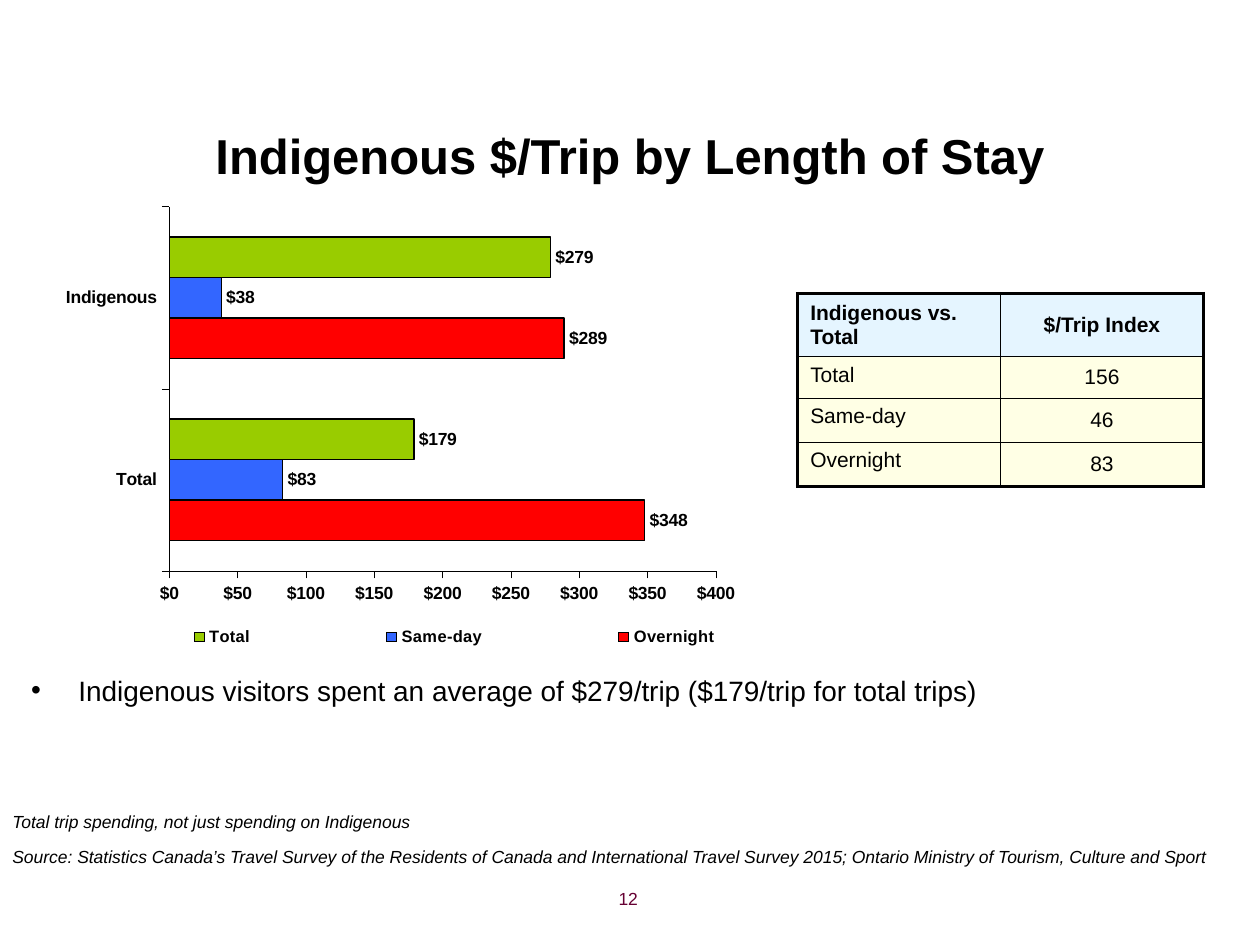
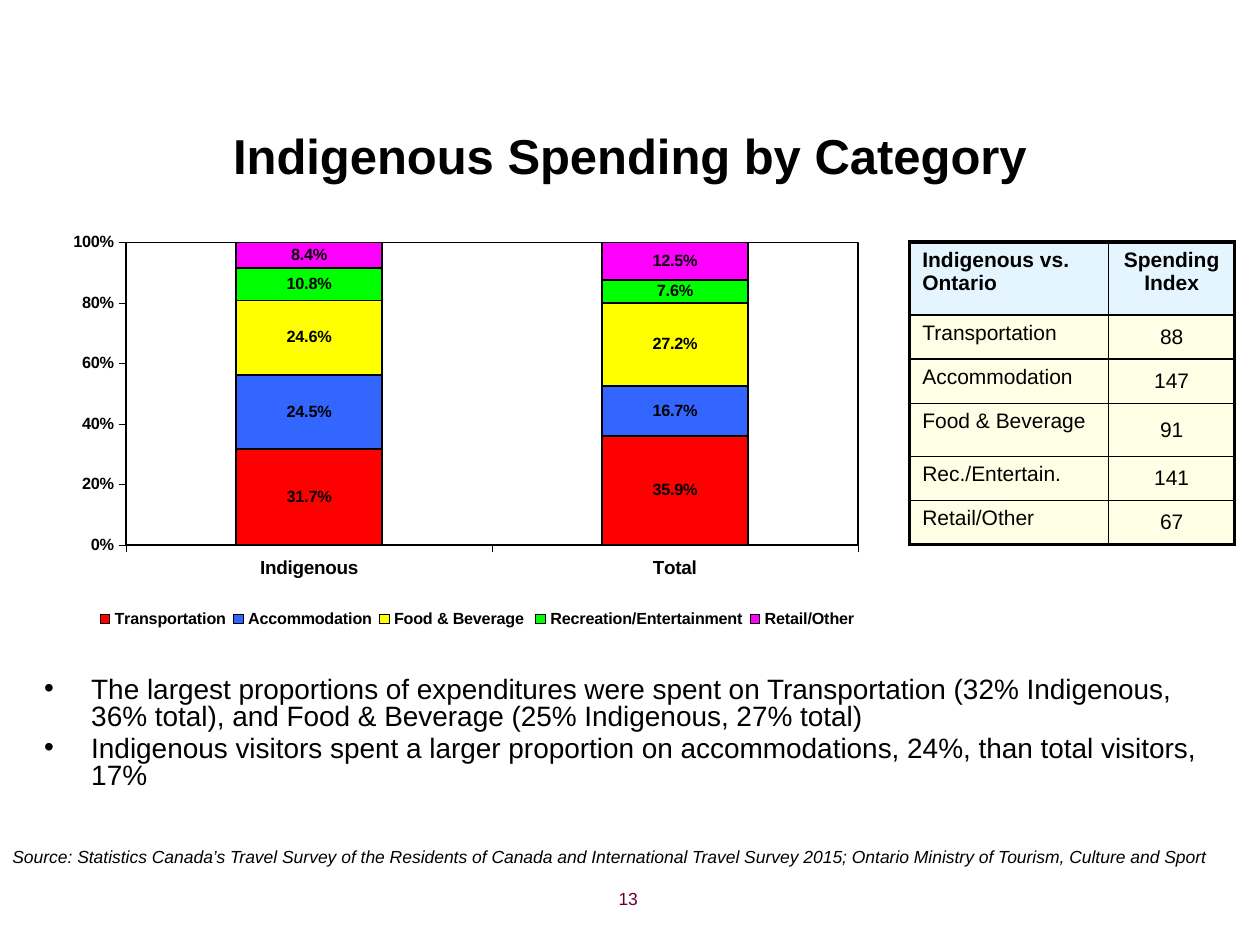
from lxml.etree import SubElement as Sub
from pptx import Presentation
from pptx.chart.data import CategoryChartData as Data
from pptx.dml.color import RGBColor
from pptx.enum.chart import XL_CHART_TYPE as Kind, XL_LABEL_POSITION as Spot
from pptx.enum.chart import XL_LEGEND_POSITION as Side, XL_TICK_MARK as Tick
from pptx.enum.text import MSO_ANCHOR as Anchor, PP_ALIGN as Align
from pptx.oxml import parse_xml
from pptx.oxml.ns import nsdecls, qn
from pptx.util import Cm, Pt

BLACK, RED, BLUE = "000000", "FF0000", "3366FF"
HEAD, ROW, PLUM = "CCECFF", "FFFFCC", "660033"
BASE = {"name": "Arial", "size": 12, "bold": False, "italic": False, "color": BLACK}
SOURCE = ("Source: Statistics Canada’s Travel Survey of the Residents of Canada and "
          "International Travel Survey 2015; Ontario Ministry of Tourism, Culture and Sport")
SOURCE_TOP, NOTE_TOP = 16.94, 16.23


def rgb(text):
    return RGBColor.from_string(text)


def box(*sizes):
    return [Cm(size) for size in sizes]


def style(font, **form):
    for key, value in {**BASE, **form}.items():
        if key == "color":
            font.color.rgb = rgb(value)
        else:
            setattr(font, key, Pt(value) if key == "size" else value)


def outline(line, width):
    line.color.rgb = rgb(BLACK)
    line.width = Pt(width)


def add_text(slide, area, lines, align=Align.LEFT, bullet=False, **form):
    frame = slide.shapes.add_textbox(*box(*area)).text_frame
    frame.word_wrap = True
    for n, text in enumerate(lines):
        para = frame.paragraphs[0] if n == 0 else frame.add_paragraph()
        para.text = text
        para.alignment = align
        if bullet:
            props = para._p.get_or_add_pPr()
            props.set("marL", str(Cm(0.95)))
            props.set("indent", str(-Cm(0.95)))
            Sub(props, qn("a:buFont")).set("typeface", "Arial")
            Sub(props, qn("a:buChar")).set("char", "•")
            para.line_spacing = 0.8
            if n:
                para.space_before = Pt(3.2)
        style(para.runs[0].font, **form)


def add_frame(deck, title, page):
    """Start a slide with its title, source line and page number."""
    slide = deck.slides.add_slide(deck.slide_layouts[5])
    head = slide.shapes.title
    head.left, head.top, head.width, head.height = box(1.27, 2.18, 22.86, 1.9)
    head.text_frame.text = title
    head.text_frame.vertical_anchor = Anchor.MIDDLE
    para = head.text_frame.paragraphs[0]
    para.alignment = Align.CENTER
    style(para.runs[0].font, size=28, bold=True)
    add_note(slide, SOURCE_TOP, SOURCE)
    add_text(slide, (7.19, 17.78, 5.92, 0.89), [page], Align.RIGHT, size=10, color=PLUM)
    return slide


def add_note(slide, top, text):
    add_text(slide, (0, top, 24.89, 0.69), [text], size=10, italic=True)


def paint(cell, color, edges):
    """Fill a cell at half strength and rule its left, right, top and bottom."""
    cell.fill.solid()
    cell.fill.fore_color.rgb = rgb(color)
    props = cell._tc.get_or_add_tcPr()
    tint = props.find(".//" + qn("a:srgbClr"))
    Sub(tint, qn("a:alpha")).set("val", "50000")
    for n, (side, outer) in enumerate(zip("LRTB", edges)):
        width = Pt(2.25 if outer else 1)
        props.insert(n, parse_xml(
            f'<a:ln{side} {nsdecls("a")} w="{width}"><a:solidFill>'
            f'<a:srgbClr val="{BLACK}"/></a:solidFill></a:ln{side}>'))


def add_index(slide, spot, widths, heights, rows, anchor):
    """Table of labels and index values; anchor is that of the heading row."""
    area = box(*spot, sum(widths), sum(heights))
    table = slide.shapes.add_table(len(rows), len(widths), *area).table
    table.first_row = table.horz_banding = False
    for col, width in zip(table.columns, widths):
        col.width = Cm(width)
    for r, (height, texts) in enumerate(zip(heights, rows)):
        table.rows[r].height = Cm(height)
        for c, text in enumerate(texts):
            cell = table.cell(r, c)
            cell.text = text
            para = cell.text_frame.paragraphs[0]
            para.alignment = Align.CENTER if c else Align.LEFT
            style(para.runs[0].font, bold=r == 0)
            cell.vertical_anchor = Anchor.TOP if r else anchor
            if r and c:
                cell.vertical_anchor = Anchor.MIDDLE
                for side in ("left", "right", "top", "bottom"):
                    setattr(cell, "margin_" + side, 0)
            paint(cell, HEAD if r == 0 else ROW,
                  (c == 0, c == len(texts) - 1, r == 0, r == len(rows) - 1))


def place(part, index, area, inner=False):
    """Fix a chart part at x, y, width and height, as shares of the chart."""
    for old in part.findall(qn("c:layout")):
        part.remove(old)
    target = '<c:layoutTarget val="inner"/>' if inner else ""
    modes = "".join(f'<c:{k}Mode val="edge"/>' for k in "xy")
    sizes = "".join(f'<c:{k} val="{v}"/>' for k, v in zip("xywh", area))
    part.insert(index, parse_xml(
        f'<c:layout {nsdecls("c")}><c:manualLayout>{target}{modes}{sizes}'
        '</c:manualLayout></c:layout>'))


def add_chart(slide, kind, area, names, series, form):
    data = Data()
    data.categories = names
    for name, values, _ in series:
        data.add_series(name, values)
    chart = slide.shapes.add_chart(kind, *box(*area), data).chart
    chart.has_title = False
    style(chart.font, size=form["size"], bold=True)

    plot = chart.plots[0]
    plot.vary_by_categories = False
    plot.gap_width, plot.overlap = 150, form["overlap"]
    for item, (_, _, color) in zip(plot.series, series):
        item.format.fill.solid()
        item.format.fill.fore_color.rgb = rgb(color)
        outline(item.format.line, form["edge"])
        labels = item.data_labels
        labels.show_value = True
        labels.position = form["spot"]
        labels.number_format, labels.number_format_is_linked = form["label"], False
        style(labels.font, size=form["size"], bold=True)

    scale = chart.value_axis
    scale.minimum_scale, scale.maximum_scale = 0, form["top"]
    scale.major_unit = form["step"]
    scale.has_major_gridlines = False
    scale.tick_labels.number_format = form["scale"]
    scale.tick_labels.number_format_is_linked = False
    for axis, size in ((scale, form["size"]), (chart.category_axis, form["names"])):
        axis.major_tick_mark, axis.minor_tick_mark = Tick.OUTSIDE, Tick.NONE
        outline(axis.format.line, 0.25)
        style(axis.tick_labels.font, size=size, bold=True)

    chart.has_legend = True
    legend = chart.legend
    legend.position, legend.include_in_layout = Side.BOTTOM, False
    style(legend.font, size=form["key"], bold=True)
    place(legend._element, 1, form["legend"])
    inside = chart._chartSpace.chart.plotArea
    place(inside, 0, form["plot"], inner=True)
    if form["framed"]:
        inside.append(parse_xml(
            f'<c:spPr {nsdecls("c", "a")}><a:noFill/><a:ln w="{Pt(1)}"><a:solidFill>'
            f'<a:srgbClr val="{BLACK}"/></a:solidFill></a:ln></c:spPr>'))


def build_trips(deck):
    slide = add_frame(deck, "Indigenous $/Trip by Length of Stay", "12")
    add_text(slide, (0.38, 13.59, 24.13, 4.01), [
        "Indigenous visitors spent an average of $279/trip ($179/trip for total trips)",
    ], bullet=True, size=16)
    add_index(slide, (16.08, 5.92), (4.09, 4.09), (1.27, 0.84, 0.89, 0.89), [
        ("Indigenous vs. Total", "$/Trip Index"),
        ("Total", "156"), ("Same-day", "46"), ("Overnight", "83"),
    ], Anchor.MIDDLE)
    money = r"\$#,##0"
    add_chart(slide, Kind.BAR_CLUSTERED, (0.18, 3.96, 19.13, 9.45),
              ("Total", "Indigenous"), [
        ("Overnight", (348, 289), RED),
        ("Same-day", (83, 38), BLUE),
        ("Total", (179, 279), "99CC00"),
    ], {"size": 10, "names": 10, "key": 9.4, "edge": 0.75, "overlap": 0,
        "spot": Spot.OUTSIDE_END, "label": money, "scale": money,
        "top": 400, "step": 50, "framed": False,
        "plot": (0.169, 0.022, 0.576, 0.777), "legend": (0.057, 0.9, 0.825, 0.08)})
    add_note(slide, NOTE_TOP, "Total trip spending, not just spending on Indigenous")


def build_spending(deck):
    slide = add_frame(deck, "Indigenous Spending by Category", "13")
    add_text(slide, (0.64, 13.54, 24.13, 3.61), [
        "The largest proportions of expenditures were spent on Transportation "
        "(32% Indigenous, 36% total), and Food & Beverage (25% Indigenous, 27% total)",
        "Indigenous visitors spent a larger proportion on accommodations, 24%, "
        "than total visitors, 17%",
    ], bullet=True, size=16)
    add_index(slide, (18.34, 4.88), (4.01, 2.54), (1.47, 0.89, 0.89, 1.07, 0.89, 0.89), [
        ("Indigenous vs. Ontario", "Spending Index"),
        ("Transportation", "88"), ("Accommodation", "147"), ("Food & Beverage", "91"),
        ("Rec./Entertain.", "141"), ("Retail/Other", "67"),
    ], Anchor.TOP)
    add_chart(slide, Kind.COLUMN_STACKED_100, (0.79, 4.57, 16.69, 9.65),
              ("Indigenous", "Total"), [
        ("Transportation", (0.317, 0.359), RED),
        ("Accommodation", (0.245, 0.167), BLUE),
        ("Food & Beverage ", (0.246, 0.272), "FFFF00"),
        ("Recreation/Entertainment", (0.108, 0.076), "00FF00"),
        ("Retail/Other", (0.084, 0.125), "FF00FF"),
    ], {"size": 9.3, "names": 10.8, "key": 9.2, "edge": 1, "overlap": 100,
        "spot": Spot.CENTER, "label": "0.0%", "scale": "0%",
        "top": 1, "step": 0.2, "framed": True,
        "plot": (0.105, 0.033, 0.884, 0.632), "legend": (0.064, 0.78, 0.93, 0.08)})


def main():
    deck = Presentation()
    deck.slide_width, deck.slide_height = box(25.4, 19.05)
    build_trips(deck)
    build_spending(deck)
    deck.save("out.pptx")


if __name__ == "__main__":
    main()
